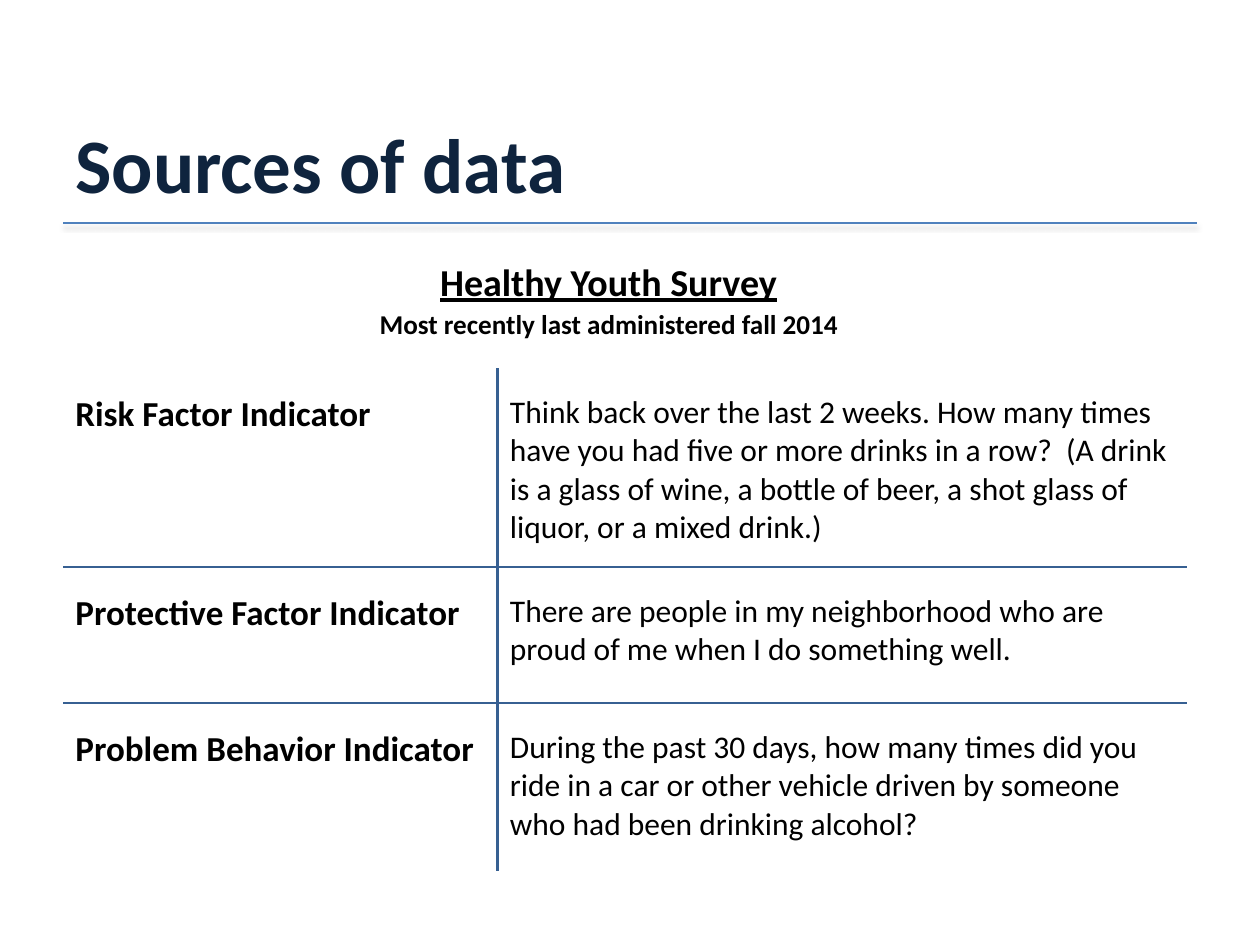
from lxml import etree
from pptx import Presentation
from pptx.dml.color import RGBColor
from pptx.enum.shapes import MSO_CONNECTOR
from pptx.enum.text import MSO_ANCHOR, PP_ALIGN
from pptx.oxml import parse_xml
from pptx.oxml.ns import nsdecls, qn
from pptx.util import Cm, Pt

STRAIGHT = MSO_CONNECTOR.STRAIGHT
TOP, MIDDLE = MSO_ANCHOR.TOP, MSO_ANCHOR.MIDDLE
LEFT, CENTER = PP_ALIGN.LEFT, PP_ALIGN.CENTER
FONT = "Calibri"
COLORS = {"title": "0F243E", "text": "000000", "rule": "4F81BD", "grid": "376092"}
COLUMNS = (8.76, 13.89)
ROWS = (
    (4.01, "Risk Factor Indicator",
     "Think back over the last 2 weeks. How many times have you had five or more "
     "drinks in a row?  (A drink is a glass of wine, a bottle of beer, a shot glass "
     "of liquor, or a mixed drink.)"),
    (2.74, "Protective Factor Indicator",
     "There are people in my neighborhood who are proud of me when I do something well."),
    (3.38, "Problem Behavior Indicator",
     "During the past 30 days, how many times did you ride in a car or other vehicle "
     "driven by someone who had been drinking alcohol?"),
)


def add_run(p, text, size, color="text", bold=False, underline=False):
    """Append one styled run to a paragraph."""
    r = p.add_run()
    r.text = text
    r.font.name = FONT
    r.font.size = Pt(size)
    r.font.bold = bold
    r.font.underline = underline
    r.font.color.rgb = RGBColor.from_string(COLORS[color])


def add_text_frame(slide, left, top, width, height, anchor=TOP):
    """Add a wrapping text box and return its text frame."""
    sp = slide.shapes.add_textbox(Cm(left), Cm(top), Cm(width), Cm(height))
    tf = sp.text_frame
    tf.word_wrap = True
    tf.vertical_anchor = anchor
    return tf


def add_header(slide, left, top, width, height):
    """Place the title with a softly shadowed rule just below it."""
    rule_y = Cm(top + height + 0.05)
    rule = slide.shapes.add_connector(STRAIGHT, Cm(left), rule_y, Cm(left + width), rule_y)
    rule.line.color.rgb = RGBColor.from_string(COLORS["rule"])
    rule.line.width = Pt(1)
    rule._element.spPr.append(parse_xml(
        f'<a:effectLst {nsdecls("a")}>'
        '<a:outerShdw blurRad="40000" dist="20000" dir="5400000" rotWithShape="0">'
        '<a:srgbClr val="000000"><a:alpha val="38000"/></a:srgbClr>'
        '</a:outerShdw></a:effectLst>'))
    tf = add_text_frame(slide, left, top, width - 2.06, height, MIDDLE)
    add_run(tf.paragraphs[0], "Sources of data", 44, "title", bold=True)


def add_survey_heading(slide, left, top, width, height):
    """Place the centred survey name and its date line."""
    tf = add_text_frame(slide, left, top, width, height)
    p = tf.paragraphs[0]
    p.alignment = CENTER
    add_run(p, "Healthy Youth Survey", 21.7, bold=True, underline=True)
    p = tf.add_paragraph()
    p.alignment = CENTER
    p.space_before = Pt(2)
    add_run(p, "Most recently last administered fall 2014", 15.5, bold=True)


def set_borders(cell, sides):
    """Draw grid lines on the named sides of a cell, and none on the others."""
    tc_pr = cell._tc.get_or_add_tcPr()
    for i, side in enumerate("LRTB"):
        ln = etree.Element(qn(f"a:ln{side}"), w=str(Pt(1.5)))
        if side in sides:
            fill = etree.SubElement(ln, qn("a:solidFill"))
            etree.SubElement(fill, qn("a:srgbClr"), val=COLORS["grid"])
        else:
            etree.SubElement(ln, qn("a:noFill"))
        tc_pr.insert(i, ln)


def fill_cell(cell, text, size, bold, sides):
    """Write a transparent cell and its inner grid lines."""
    cell.fill.background()
    cell.margin_left = cell.margin_right = Cm(0.25)
    cell.margin_top, cell.margin_bottom = Cm(0.51), Cm(0.13)
    cell.vertical_anchor = TOP
    p = cell.text_frame.paragraphs[0]
    p.alignment = LEFT
    add_run(p, text, size, bold=bold)
    set_borders(cell, sides)


def add_indicator_table(slide, left, top):
    """Place the table of indicators and their survey questions."""
    height = sum(row[0] for row in ROWS)
    frame = slide.shapes.add_table(len(ROWS), len(COLUMNS), Cm(left), Cm(top),
                                   Cm(sum(COLUMNS)), Cm(height))
    table = frame.table
    table.first_row = table.horz_banding = False
    for column, width in zip(table.columns, COLUMNS):
        column.width = Cm(width)
    for i, (row_height, indicator, question) in enumerate(ROWS):
        table.rows[i].height = Cm(row_height)
        sides = ("T" if i > 0 else "") + ("B" if i < len(ROWS) - 1 else "")
        fill_cell(table.cell(i, 0), indicator, 20, True, sides + "R")
        fill_cell(table.cell(i, 1), question, 18, False, sides + "L")


def main():
    """Build and save the slide."""
    prs = Presentation()
    prs.slide_width, prs.slide_height = Cm(25.4), Cm(19.05)
    slide = prs.slides.add_slide(prs.slide_layouts[6])
    add_header(slide, 1.27, 2.11, 22.86, 2.34)
    add_survey_heading(slide, 2.11, 5.08, 20.32, 1.7)
    add_indicator_table(slide, 1.27, 7.42)
    prs.save("out.pptx")


if __name__ == "__main__":
    main()
